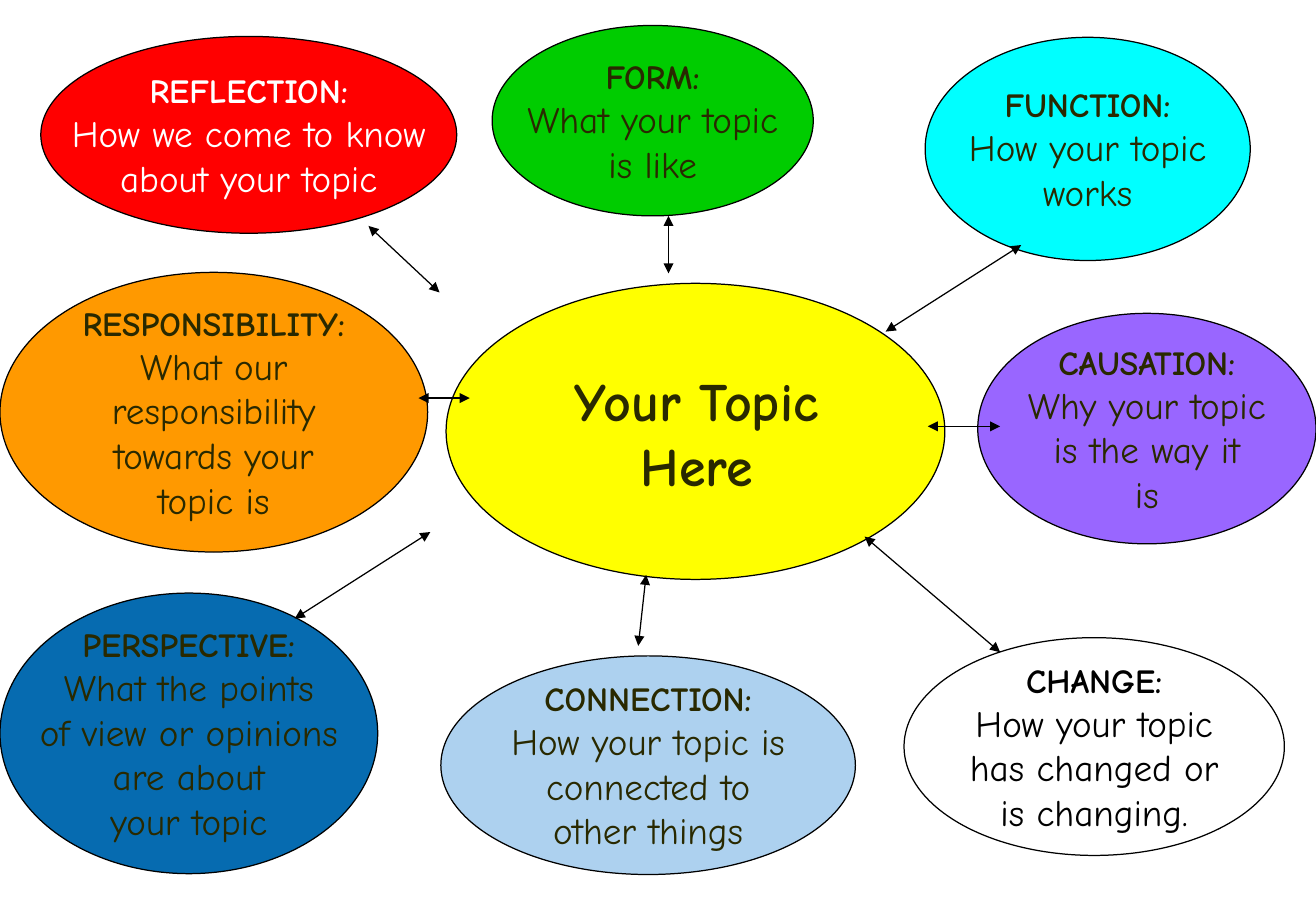
from pptx import Presentation
from pptx.dml.color import RGBColor
from pptx.enum.shapes import MSO_CONNECTOR, MSO_SHAPE
from pptx.enum.text import MSO_ANCHOR, MSO_AUTO_SIZE, PP_ALIGN
from pptx.oxml.ns import qn
from pptx.util import Inches, Pt
from lxml.etree import SubElement

FONT = "Comic Neue"
HEX = {
    "ink": "292900", "black": "000000", "white": "FFFFFF", "yellow": "FFFF00",
    "green": "00CC00", "cyan": "00FFFF", "violet": "9966FF", "sky": "ADD1EF",
    "blue": "066BB0", "orange": "FF9900", "red": "FF0000",
}
TOPIC = "Your Topic Here"
HUB = (33.9, 31.1, 37.9, 32.5)
LABEL = (38.8, 39.7, 28.3, 15.6)
IDEAS = [
    ("FORM:", ["What your topic", "is like"],
     "green", "ink", (37.4, 2.8, 24.4, 20.9)),
    ("FUNCTION:", ["How your topic", "works"],
     "cyan", "ink", (70.3, 4.1, 24.7, 24.5)),
    ("CAUSATION:", ["Why your topic", "is the way it", "is"],
     "violet", "ink", (74.3, 34.4, 25.7, 25.3)),
    ("CHANGE:", ["How your topic", "has changed or", "is changing."],
     "white", "black", (68.7, 70, 28.9, 23.9)),
    ("CONNECTION:", ["How your topic is", "connected to", "other things"],
     "sky", "ink", (33.5, 72, 31.5, 24)),
    ("PERSPECTIVE:",
     ["What the points", "of view or opinions", "are about", "your topic"],
     "blue", "ink", (0, 65.1, 28.7, 30.8)),
    ("RESPONSIBILITY:",
     ["What our", "responsibility", "towards your", "topic is"],
     "orange", "ink", (0, 29.9, 32.5, 30.7)),
    ("REFLECTION:", ["How we come to know", "about your topic"],
     "red", "white", (3.1, 4, 31.6, 21.6)),
]
ARROWS = [
    (67.3, 36.4, 77.6, 26.9), (65.7, 58.9, 76, 71.6),
    (70.5, 46.8, 76, 46.8), (22.4, 67.9, 32.7, 58.4),
    (48.5, 70.9, 49.1, 63.1), (31.8, 43.7, 35.7, 43.7),
    (28, 24.8, 33.4, 32.1), (50.8, 30, 50.8, 23.7),
]

deck = Presentation()
deck.slide_width, deck.slide_height = Inches(10.83), Inches(7.5)
slide = deck.slides.add_slide(deck.slide_layouts[5])
shapes = slide.shapes


def place(box):
    sides = (deck.slide_width, deck.slide_height) * 2
    return [round(part * side / 100) for part, side in zip(box, sides)]


def color(name):
    return RGBColor.from_string(HEX[name])


def style(para, size, bold, ink):
    para.alignment = PP_ALIGN.CENTER
    para.font.name = FONT
    para.font.size = Pt(size)
    para.font.bold = bold
    para.font.color.rgb = color(ink)


def outline(shape):
    shape.line.color.rgb = color("black")
    shape.line.width = Pt(0.75)


def oval(box, fill):
    shape = shapes.add_shape(MSO_SHAPE.OVAL, *place(box))
    shape.shadow.inherit = False
    shape.fill.solid()
    shape.fill.fore_color.rgb = color(fill)
    outline(shape)
    return shape


def bubble(head, lines, fill, ink, box):
    frame = oval(box, fill).text_frame
    frame.word_wrap = False
    frame.vertical_anchor = MSO_ANCHOR.MIDDLE
    frame.text = head + "\n" + "\v".join(lines)
    first, second = frame.paragraphs
    style(first, 20, True, ink)
    style(second, 22, False, ink)


def arrow(ends):
    link = shapes.add_connector(MSO_CONNECTOR.STRAIGHT, *place(ends))
    outline(link)
    line = link.line._get_or_add_ln()
    for tip in ("a:headEnd", "a:tailEnd"):
        SubElement(line, qn(tip), type="triangle")
    SubElement(link._element.spPr, qn("a:effectLst"))


def label():
    title = shapes.title
    title.left, title.top, title.width, title.height = place(LABEL)
    frame = title.text_frame
    frame.text = TOPIC
    frame.word_wrap = True
    frame.auto_size = MSO_AUTO_SIZE.NONE
    frame.vertical_anchor = MSO_ANCHOR.TOP
    style(frame.paragraphs[0], 32, True, "ink")
    shapes._spTree.append(title._element)


oval(HUB, "yellow")
for idea in IDEAS:
    bubble(*idea)
for ends in ARROWS:
    arrow(ends)
label()
deck.save("out.pptx")
